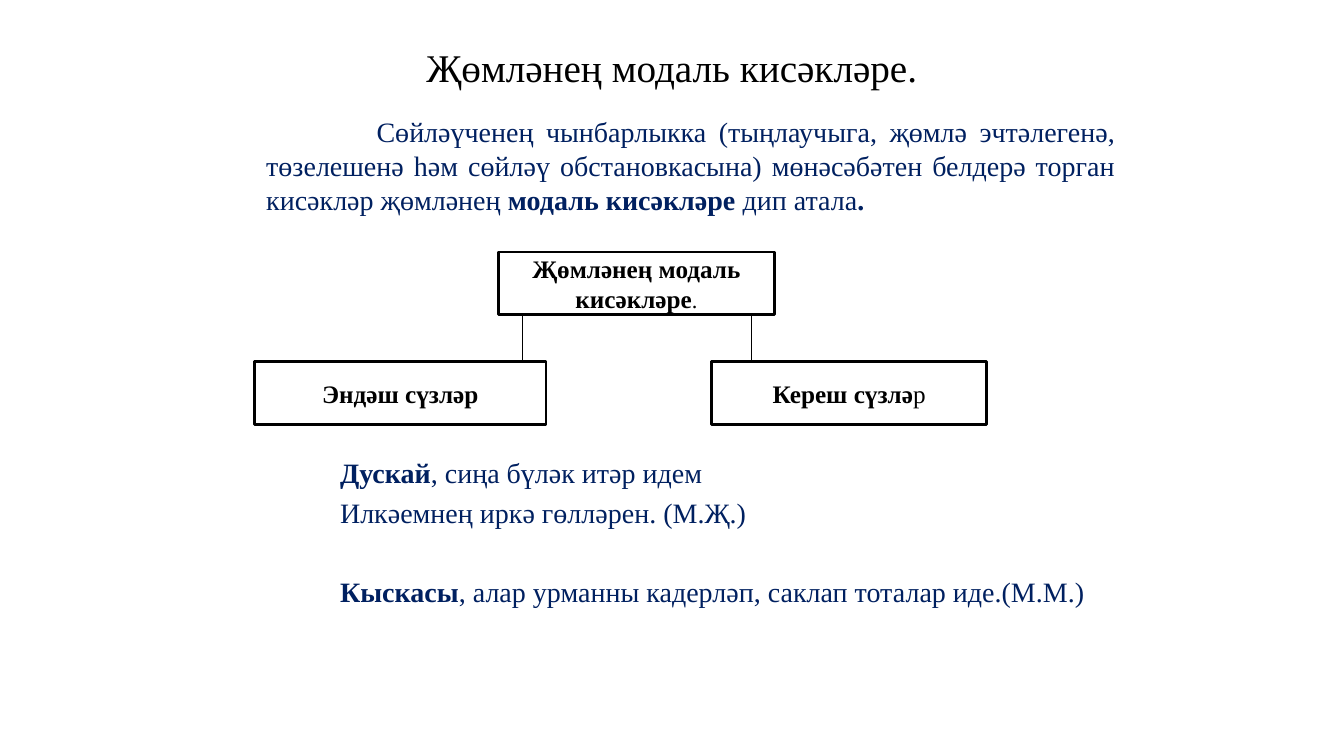
from dataclasses import dataclass

import pptx
import pptx.dml.color
import pptx.enum.shapes
import pptx.enum.text
import pptx.util
from lxml import etree
from pptx.util import Cm

COLOURS = {"black": "000000", "white": "FFFFFF", "navy": "002060"}
FONT = "Times New Roman"
ALIGN = pptx.enum.text.PP_ALIGN
ANCHOR = pptx.enum.text.MSO_ANCHOR


@dataclass
class Span:
    text: str
    bold: bool = False
    size: float | None = None


@dataclass
class Node:
    left: float
    top: float
    width: float
    spans: list[Span]


NODE_HEIGHT = 1.58
ROOT_TOP = 6.35
BRANCH_TOP = 9.12
NODES = [
    Node(12.57, ROOT_TOP, 6.94, [Span("Җөмләнең модаль кисәкләре", True), Span(".", size=16)]),
    Node(6.42, BRANCH_TOP, 7.34, [Span("Эндәш сүзләр", True)]),
    Node(17.93, BRANCH_TOP, 6.94, [Span("Кереш сүзлә", True), Span("р")]),
]
BRANCH_LINES = [13.17, 18.93]

DEFINITION = [
    Span("Сөйләүченең чынбарлыкка (тыңлаучыга, җөмлә эчтәлегенә, төзелешенә һәм сөйләү "
         "обстановкасына) мөнәсәбәтен белдерә торган кисәкләр җөмләнең "),
    Span("модаль кисәкләре", True),
    Span(" дип атала"),
    Span(".", True),
]
EXAMPLES = [
    ([Span("Дускай", True), Span(", сиңа бүләк итәр идем")], 0),
    ([Span("Илкәемнең иркә гөлләрен. (М.Җ.)")], 4.6),
    ([Span("Кыскасы", True), Span(", алар урманны кадерләп, саклап тоталар иде.(М.М.)")], 32.5),
]


def rgb(name: str) -> pptx.dml.color.RGBColor:
    return pptx.dml.color.RGBColor.from_string(COLOURS[name])


def write(para, spans: list[Span], *, size: float, colour: str = "black",
          align=ALIGN.LEFT, before: float = 0, indent: float = 0) -> None:
    para.alignment = align
    para.space_before = pptx.util.Pt(before)
    if indent:
        para._p.get_or_add_pPr().set("indent", str(Cm(indent)))
    for span in spans:
        run = para.add_run()
        run.text = span.text
        run.font.name = FONT
        run.font.size = pptx.util.Pt(span.size or size)
        run.font.bold = span.bold
        run.font.color.rgb = rgb(colour)


def add_text_frame(page, left: float, top: float, width: float, height: float,
                   anchor=ANCHOR.TOP):
    box = page.shapes.add_textbox(Cm(left), Cm(top), Cm(width), Cm(height))
    frame = box.text_frame
    frame.word_wrap = True
    frame.vertical_anchor = anchor
    return frame


def add_node(page, node: Node) -> None:
    box = page.shapes.add_shape(
        pptx.enum.shapes.MSO_SHAPE.RECTANGLE,
        Cm(node.left), Cm(node.top), Cm(node.width), Cm(NODE_HEIGHT))
    box.shadow.inherit = False
    box.fill.solid()
    box.fill.fore_color.rgb = rgb("white")
    box.line.color.rgb = rgb("black")
    box.line.width = pptx.util.Pt(2)
    box.text_frame.word_wrap = True
    box.text_frame.vertical_anchor = ANCHOR.MIDDLE
    write(box.text_frame.paragraphs[0], node.spans, size=18, align=ALIGN.CENTER)


def add_branch_line(page, x: float) -> None:
    line = page.shapes.add_connector(
        pptx.enum.shapes.MSO_CONNECTOR.STRAIGHT,
        Cm(x), Cm(ROOT_TOP + NODE_HEIGHT), Cm(x), Cm(BRANCH_TOP))
    line.line.color.rgb = rgb("black")
    line.line.width = pptx.util.Pt(0.75)
    etree.SubElement(line._element.spPr, pptx.oxml.ns.qn("a:effectLst"))


def main() -> None:
    deck = pptx.Presentation()
    deck.slide_width = Cm(33.87)
    deck.slide_height = Cm(19.05)
    page = deck.slides.add_slide(deck.slide_layouts[6])

    title = add_text_frame(page, 5.5, 0.76, 22.86, 1.83, ANCHOR.MIDDLE)
    write(title.paragraphs[0], [Span("Җөмләнең модаль кисәкләре.")], size=28, align=ALIGN.CENTER)

    definition = add_text_frame(page, 6.46, 2.77, 21.9, 2.9)
    write(definition.paragraphs[0], DEFINITION, size=20, colour="navy",
          align=ALIGN.JUSTIFY, indent=2.78)

    examples = add_text_frame(page, 8.32, 11.36, 20.04, 4.4)
    for index, (spans, before) in enumerate(EXAMPLES):
        para = examples.add_paragraph() if index else examples.paragraphs[0]
        write(para, spans, size=20, colour="navy", before=before)

    for node in NODES:
        add_node(page, node)
    for x in BRANCH_LINES:
        add_branch_line(page, x)

    deck.save("out.pptx")


if __name__ == "__main__":
    main()
